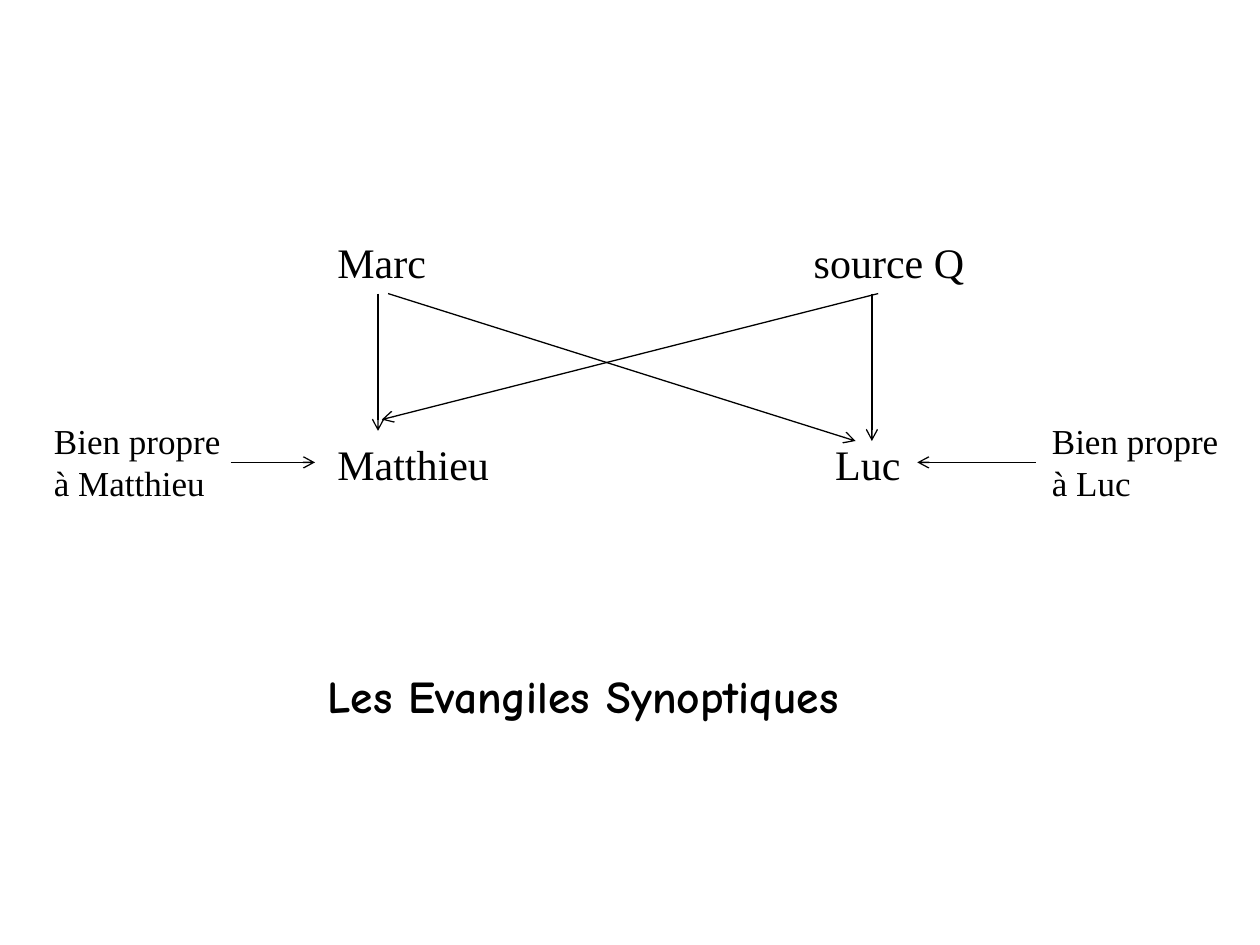
from lxml.etree import SubElement
from pptx import Presentation
from pptx.dml.color import RGBColor
from pptx.enum.shapes import MSO_CONNECTOR
from pptx.oxml.ns import qn
from pptx.util import Inches, Pt

BLACK = "000000"
SERIF = "Times New Roman"
TITLE_FONT = "Comic Neue"

# Rows and label heights
SOURCE_TOP, GOSPEL_TOP, OWN_TOP = 1.83, 3.43, 3.28
ARROW_TOP, OWN_ARROW_Y = 2.33, 3.67

# Labels: lines, left, top, width, height, size, font, bold
LABELS = [
    (["Marc"], 2.58, SOURCE_TOP, 1.0, 0.48, 24, SERIF, False),
    (["source Q"], 6.36, SOURCE_TOP, 1.5, 0.48, 24, SERIF, False),
    (["Matthieu"], 2.58, GOSPEL_TOP, 1.5, 0.48, 24, SERIF, False),
    (["Luc"], 6.53, GOSPEL_TOP, 0.8, 0.48, 24, SERIF, False),
    (["Bien propre", "à Matthieu"], 0.33, OWN_TOP, 1.52, 0.77, 20, SERIF, False),
    (["Bien propre", "à Luc"], 8.25, OWN_TOP, 1.52, 0.77, 20, SERIF, False),
    (["Les Evangiles Synoptiques"], 2.5, 5.25, 4.74, 0.54, 26, TITLE_FONT, True),
]

# Arrows: start x, start y, end x, end y
ARROWS = [
    (3.08, ARROW_TOP, 6.79, 3.5),              # Marc to Luc
    (6.97, ARROW_TOP, 3.03, 3.33),             # source Q to Matthieu
    (3.0, ARROW_TOP, 3.0, 3.42),               # Marc to Matthieu
    (6.92, ARROW_TOP, 6.92, 3.5),              # source Q to Luc
    (1.83, OWN_ARROW_Y, 2.5, OWN_ARROW_Y),     # own material to Matthieu
    (8.22, OWN_ARROW_Y, 7.28, OWN_ARROW_Y),    # own material to Luc
]


def color(value):
    return RGBColor.from_string(value)


def add_label(slide, lines, left, top, width, height, size, font, bold):
    box = slide.shapes.add_textbox(*map(Inches, (left, top, width, height)))
    box.text_frame.word_wrap = False
    paragraph = box.text_frame.paragraphs[0]
    for index, line in enumerate(lines):
        if index:
            paragraph.add_line_break()
        run = paragraph.add_run()
        run.text = line
        run.font.name = font
        run.font.size = Pt(size)
        run.font.bold = bold
        run.font.color.rgb = color(BLACK)


def add_arrow(slide, *ends):
    arrow = slide.shapes.add_connector(MSO_CONNECTOR.STRAIGHT, *map(Inches, ends))
    arrow.line.color.rgb = color(BLACK)
    arrow.line.width = Pt(0.75)
    SubElement(arrow.line._get_or_add_ln(), qn("a:tailEnd"), type="arrow")
    SubElement(arrow._element.spPr, qn("a:effectLst"))


def main():
    presentation = Presentation()
    presentation.slide_width = Inches(10)
    presentation.slide_height = Inches(7.5)
    slide = presentation.slides.add_slide(presentation.slide_layouts[6])
    for arrow in ARROWS:
        add_arrow(slide, *arrow)
    for label in LABELS:
        add_label(slide, *label)
    presentation.save("out.pptx")


if __name__ == "__main__":
    main()
